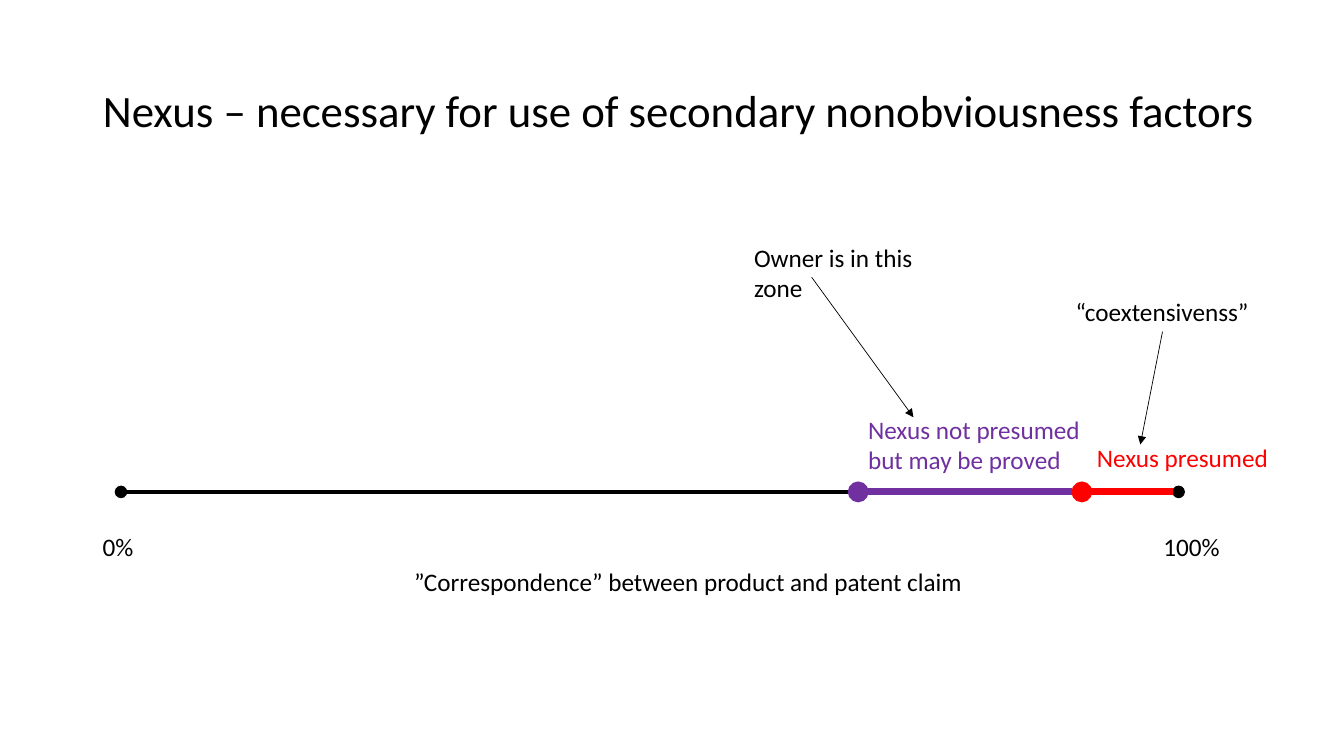
from lxml.etree import SubElement
from pptx import Presentation
from pptx.dml.color import RGBColor
from pptx.enum.shapes import MSO_CONNECTOR
from pptx.enum.text import MSO_ANCHOR, PP_ALIGN
from pptx.oxml.ns import qn
from pptx.util import Inches, Pt

SLIDE_WIDTH, SLIDE_HEIGHT = 13.33, 7.5
BLACK, RED, PURPLE = "000000", "FF0000", "7030A0"
LINE_HEIGHT = 0.4


def color(hex_code):
    """Turn a hex string into a colour."""
    return RGBColor.from_string(hex_code)


def place(part, left, top, width, height):
    """Set the box of a part in inches."""
    part.left, part.top = Inches(left), Inches(top)
    part.width, part.height = Inches(width), Inches(height)


def format_text(frame, size, hex_code):
    """Give every run of a text frame its font."""
    for paragraph in frame.paragraphs:
        for run in paragraph.runs:
            run.font.name = "Calibri"
            run.font.size = Pt(size)
            run.font.color.rgb = color(hex_code)


def add_title(slide, words, box):
    """Fill and place the title placeholder."""
    title = slide.shapes.title
    place(title, *box)
    frame = title.text_frame
    frame.text = words
    frame.word_wrap = True
    frame.vertical_anchor = MSO_ANCHOR.MIDDLE
    frame.paragraphs[0].alignment = PP_ALIGN.LEFT
    frame.paragraphs[0].line_spacing = 0.9
    format_text(frame, 32, BLACK)


def add_label(slide, words, left, top, width, hex_code=BLACK, height=LINE_HEIGHT):
    """Add a label, wrapped only when taller than one line."""
    label = slide.shapes.add_textbox(0, 0, 0, 0)
    place(label, left, top, width, height)
    label.text_frame.text = words
    label.text_frame.word_wrap = height > LINE_HEIGHT
    format_text(label.text_frame, 18, hex_code)


def add_line(slide, start, end, hex_code, weight, **ends):
    """Add a line with optional headEnd and tailEnd marks."""
    line = slide.shapes.add_connector(
        MSO_CONNECTOR.STRAIGHT, *(Inches(value) for value in (*start, *end)))
    line.line.color.rgb = color(hex_code)
    line.line.width = Pt(weight)
    outline = line.line._ln
    for mark in ("headEnd", "tailEnd"):
        if mark in ends:
            SubElement(outline, qn(f"a:{mark}"), type=ends[mark])
    SubElement(outline.getparent(), qn("a:effectLst"))


def add_scale(slide, left, axis_y, width):
    """Draw the 0-100% correspondence scale with its coloured zones."""
    def at(percent):
        return left + width * percent / 100, axis_y

    add_line(slide, at(0), at(100), BLACK, 3, headEnd="oval", tailEnd="oval")
    for words, percent, offset, label_width in (("0%", 0, -0.28, 0.51),
                                                ("100%", 100, -0.25, 0.77)):
        add_label(slide, words, at(percent)[0] + offset, axis_y + 0.34, label_width)
    add_label(slide, "”Correspondence” between product and patent claim",
              left + 2.81, axis_y + 0.69, 5.7)

    zones = (
        ("Nexus presumed", 90.85, 99.5, RED, 0.05, 0.54, 1.92, LINE_HEIGHT),
        ("Nexus not presumed but may be proved", 69.7, 89.9, PURPLE, 0, 0.82, 2.34, 0.72),
    )
    for words, start, end, hex_code, offset, rise, label_width, height in zones:
        add_line(slide, at(start), at(end), hex_code, 5, headEnd="oval")
        add_label(slide, words, at(start)[0] + offset, axis_y - rise,
                  label_width, hex_code, height)


def add_callout(slide, words, left, top, width, tail_offset, run, drop):
    """Add a label with an arrow leaving its lower edge."""
    add_label(slide, words, left, top, width)
    start_x, start_y = left + tail_offset, top + LINE_HEIGHT
    add_line(slide, (start_x, start_y), (start_x + run, start_y + drop),
             BLACK, 0.5, tailEnd="triangle")


def build_nexus_slide(deck):
    """Build the nexus slide."""
    slide = deck.slides.add_slide(deck.slide_layouts[5])
    add_title(slide, "Nexus – necessary for use of secondary nonobviousness factors",
              (0.92, 0.4, 11.79, 1.45))
    add_scale(slide, 1.2, 4.88, 10.49)
    add_callout(slide, "Owner is in this zone", 7.38, 2.35, 2.25, 0.67, 1.01, 1.39)
    add_callout(slide, "“coextensivenss”", 10.57, 2.89, 1.93, 0.96, -0.22, 1.12)


def main():
    """Create and save the deck."""
    deck = Presentation()
    deck.slide_width, deck.slide_height = Inches(SLIDE_WIDTH), Inches(SLIDE_HEIGHT)
    build_nexus_slide(deck)
    deck.save("out.pptx")


if __name__ == "__main__":
    main()
